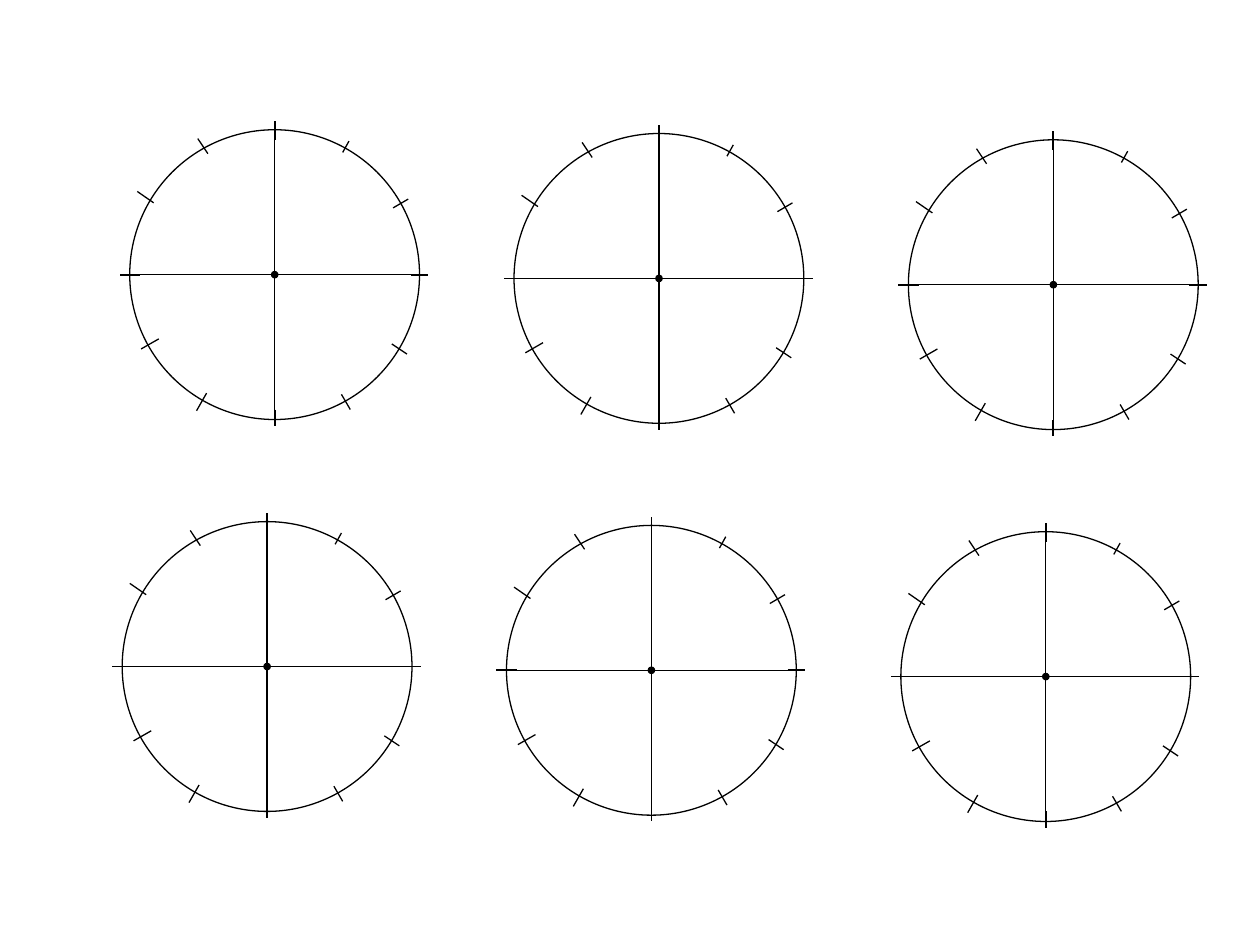
from lxml import etree
from pptx import Presentation
from pptx import util as u
from pptx.dml.color import RGBColor
from pptx.enum import shapes as s
from pptx.oxml.ns import qn

ink = {"line": "000000", "dot": "000000"}
deck = Presentation()
deck.slide_width, deck.slide_height = u.Inches(10), u.Inches(7.5)
slide = deck.slides.add_slide(deck.slide_layouts[6])
unit = deck.slide_width // 1000

cols = [(218, 218), (523, 221), (836, 226)]
rows = [(0, 0), (-6, 311)]
radius, dot = 115, 2.5
thin, bold = 0.75, 1

axes = [(-115, 0, 115, 0), (0, -116, 0, 117)]
ticks = [
    (54, -97, 59, -106), (-96, -57, -109, -66),
    (-53, -96, -61, -108), (93, 55, 105, 63),
    (53, 95, 60, 107), (-54, 94, -62, 108),
    (-92, 51, -106, 59), (94, -53, 106, -60),
]
ends = [(0, -107, 0, -122), (0, 107, 0, 120), (108, 0, 122, 0), (-107, 0, -123, 0)]
lines = [(seg, thin) for seg in axes + ticks] + [(seg, bold) for seg in ends]


def pen(item, width):
    item.line.color.rgb = RGBColor.from_string(ink["line"])
    item.line.width = u.Pt(width)


def disc(group, x, y, r):
    box = [round(v * unit) for v in (x - r, y - r, 2 * r, 2 * r)]
    item = group.shapes.add_shape(s.MSO_SHAPE.OVAL, *box)
    item.shadow.inherit = False
    pen(item, thin)
    return item


for dx, dy in rows:
    for left, top in cols:
        x, y = left + dx, top + dy
        dial = slide.shapes.add_group_shape()
        disc(dial, x, y, radius).fill.background()
        for (x1, y1, x2, y2), width in lines:
            span = [v * unit for v in (x + x1, y + y1, x + x2, y + y2)]
            mark = dial.shapes.add_connector(s.MSO_CONNECTOR.STRAIGHT, *span)
            pen(mark, width)
            etree.SubElement(mark._element.spPr, qn("a:effectLst"))
        hub = disc(dial, x, y, dot)
        hub.fill.solid()
        hub.fill.fore_color.rgb = RGBColor.from_string(ink["dot"])

deck.save("out.pptx")
